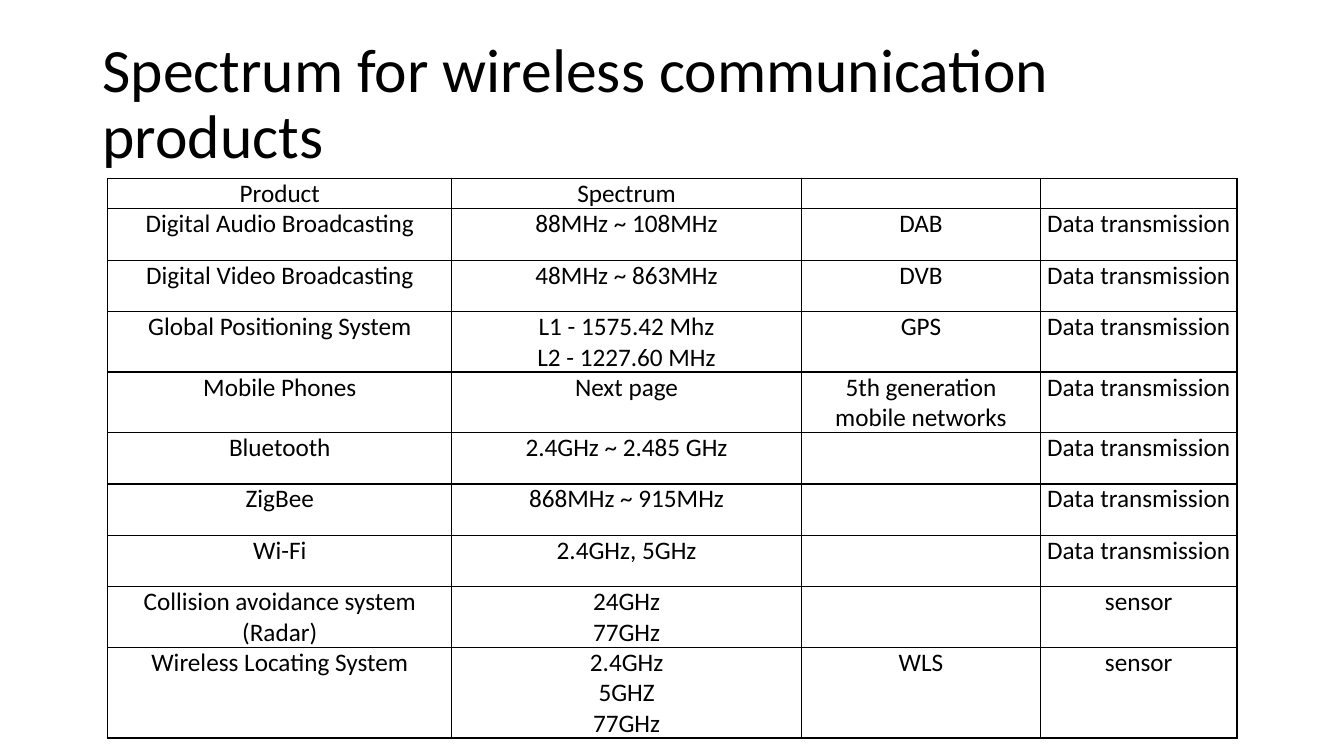
from lxml import etree
from pptx import Presentation
from pptx import util as u
from pptx.dml.color import RGBColor
from pptx.enum import text
from pptx.oxml import ns

COLORS = {"ink": "000000", "paper": "FFFFFF"}
COLUMN_WIDTHS = [3.41, 3.47, 2.37, 1.95]
HEADER_HEIGHT = 0.17
ROW_HEIGHT = 0.51
DATA = "Data transmission"
PRODUCTS = [
    ("Product", "Spectrum", "", ""),
    ("Digital Audio Broadcasting", "88MHz ~ 108MHz", "DAB", DATA),
    ("Digital Video Broadcasting", "48MHz ~ 863MHz", "DVB", DATA),
    ("Global Positioning System", "L1 - 1575.42 Mhz\nL2 - 1227.60 MHz", "GPS", DATA),
    ("Mobile Phones", "Next page", "5th generation mobile networks", DATA),
    ("Bluetooth", "2.4GHz ~ 2.485 GHz", "", DATA),
    ("ZigBee", "868MHz ~ 915MHz", "", DATA),
    ("Wi-Fi", "2.4GHz, 5GHz", "", DATA),
    ("Collision avoidance system\n(Radar)", "24GHz\n77GHz", "", "sensor"),
    ("Wireless Locating System", "2.4GHz\n5GHZ\n77GHz", "WLS", "sensor"),
]


class SlideBuilder:
    font = "Calibri"
    title_size = 44
    body_size = 18
    border_width = 1

    def __init__(self, deck):
        self.page = deck.slides.add_slide(deck.slide_layouts[6])
        fill = self.page.background.fill
        fill.solid()
        fill.fore_color.rgb = RGBColor.from_string(COLORS["paper"])

    def add_lines(self, frame, words, size, align, spacing=1.0):
        for index, line in enumerate(words.split("\n")):
            para = frame.add_paragraph() if index else frame.paragraphs[0]
            para.alignment = align
            para.line_spacing = spacing
            para.font.size = u.Pt(size)
            if line:
                span = para.add_run()
                span.text = line
                span.font.name = self.font
                span.font.size = u.Pt(size)
                span.font.color.rgb = RGBColor.from_string(COLORS["ink"])

    def title(self, words, left, top, width, height):
        box = self.page.shapes.add_textbox(*map(u.Inches, (left, top, width, height)))
        frame = box.text_frame
        frame.word_wrap = True
        frame.vertical_anchor = text.MSO_ANCHOR.MIDDLE
        self.add_lines(frame, words, self.title_size, text.PP_ALIGN.LEFT, 0.9)

    def borders(self, cell):
        properties = cell._tc.get_or_add_tcPr()
        for side in ("lnL", "lnR", "lnT", "lnB"):
            line = etree.SubElement(properties, ns.qn(f"a:{side}"), w=str(u.Pt(self.border_width)))
            fill = etree.SubElement(line, ns.qn("a:solidFill"))
            etree.SubElement(fill, ns.qn("a:srgbClr"), val=COLORS["ink"])

    def cell(self, cell, words):
        cell.margin_left = cell.margin_right = u.Inches(0.06)
        cell.margin_top = cell.margin_bottom = 0
        self.borders(cell)
        cell.fill.background()
        self.add_lines(cell.text_frame, words, self.body_size, text.PP_ALIGN.CENTER)

    def table(self, rows, left, top, widths, heights):
        frame = self.page.shapes.add_table(
            len(rows), len(widths),
            *map(u.Inches, (left, top, sum(widths), sum(heights))))
        table = frame.table
        table.first_row = table.horz_banding = False
        for column, width in zip(table.columns, widths):
            column.width = u.Inches(width)
        for row, height, entries in zip(table.rows, heights, rows):
            row.height = u.Inches(height)
            for cell, words in zip(row.cells, entries):
                self.cell(cell, words)


def main():
    deck = Presentation()
    deck.slide_width = u.Inches(13.33)
    deck.slide_height = u.Inches(7.5)
    slide = SlideBuilder(deck)
    slide.title("Spectrum for wireless communication products", 0.92, 0.32, 11.5, 1.45)
    heights = [HEADER_HEIGHT] + [ROW_HEIGHT] * (len(PRODUCTS) - 1)
    slide.table(PRODUCTS, 1.07, 1.77, COLUMN_WIDTHS, heights)
    deck.save("out.pptx")


if __name__ == "__main__":
    main()
